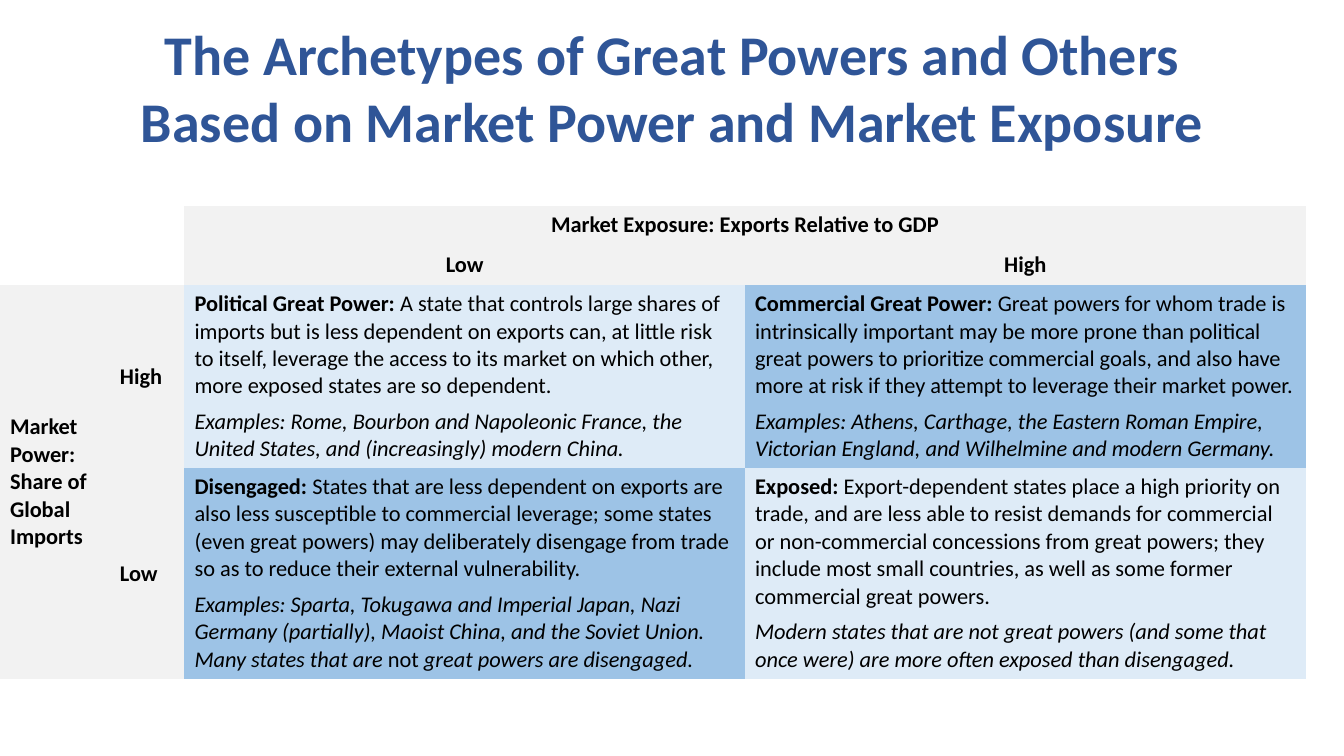
from dataclasses import dataclass

from pptx import Presentation
from pptx.dml.color import RGBColor
from pptx.enum.text import MSO_ANCHOR, MSO_AUTO_SIZE, PP_ALIGN
from pptx.util import Inches, Pt


@dataclass(frozen=True)
class Theme:
    face: str = "Calibri"
    title_size: int = 40
    table_size: int = 16
    title_ink: str = "2F5597"
    ink: str = "000000"
    header: str = "F2F2F2"
    pale: str = "DEEBF7"
    strong: str = "9DC3E6"


THEME = Theme()
BOLD = {"bold": True, "italic": False}
PLAIN = {"bold": False, "italic": False}
ITALIC = {"bold": False, "italic": True}
PLAIN_GRID_STYLE = "{2D5ABB26-0587-4C30-8999-92F81FD0307C}"


def add_text(paragraph, words, size, ink, style):
    run = paragraph.add_run()
    run.text = words
    run.font.color.rgb = RGBColor.from_string(ink)
    for key, value in {"name": THEME.face, "size": Pt(size), **style}.items():
        setattr(run.font, key, value)


def fill_cell(cell, colour, paragraphs, align, anchor, space_after=0):
    """Colour a cell and write its paragraphs, each a list of (words, style)."""
    cell.fill.solid()
    cell.fill.fore_color.rgb = RGBColor.from_string(colour)
    cell.vertical_anchor = anchor
    for index, pieces in enumerate(paragraphs):
        frame = cell.text_frame
        paragraph = frame.add_paragraph() if index else frame.paragraphs[0]
        paragraph.alignment = align
        paragraph.space_after = Pt(space_after)
        for words, style in pieces:
            add_text(paragraph, words, THEME.table_size, THEME.ink, style)


deck = Presentation()
deck.slide_width, deck.slide_height = Inches(13.33), Inches(7.5)
slide = deck.slides.add_slide(deck.slide_layouts[5])

# Title
heading = slide.shapes.title
heading_place = {
    "left": 0,
    "top": Inches(0.14),
    "width": deck.slide_width,
    "height": int(deck.slide_height * 0.12),
}
for key, value in heading_place.items():
    setattr(heading, key, value)
heading_format = {
    "word_wrap": True,
    "auto_size": MSO_AUTO_SIZE.NONE,
    "vertical_anchor": MSO_ANCHOR.TOP,
}
for key, value in heading_format.items():
    setattr(heading.text_frame, key, value)
heading_line = heading.text_frame.paragraphs[0]
heading_line.alignment = PP_ALIGN.CENTER
add_text(heading_line, "The Archetypes of Great Powers and Others",
         THEME.title_size, THEME.title_ink, BOLD)
heading_line.add_line_break()
add_text(heading_line, "Based on Market Power and Market Exposure",
         THEME.title_size, THEME.title_ink, BOLD)

# Matrix grid
column_widths = [1.09, 0.74, 5.56, 5.56]
row_heights = [0.38, 0.41, 1.81, 2.09]
matrix_frame = slide.shapes.add_table(
    len(row_heights), len(column_widths), 0, Inches(2.04),
    Inches(sum(column_widths)), Inches(sum(row_heights)))
matrix = matrix_frame.table
matrix.first_row = matrix.horz_banding = False
for style_id in matrix_frame.element.xpath(".//a:tableStyleId"):
    style_id.text = PLAIN_GRID_STYLE
for column, width in zip(matrix.columns, column_widths):
    column.width = Inches(width)
for row, height in zip(matrix.rows, row_heights):
    row.height = Inches(height)
matrix.cell(0, 2).merge(matrix.cell(0, 3))
matrix.cell(2, 0).merge(matrix.cell(3, 0))

# Axis headers
axis_headers = [
    (0, 2, "Market Exposure: Exports Relative to GDP", PP_ALIGN.CENTER, MSO_ANCHOR.TOP),
    (1, 2, "Low", PP_ALIGN.CENTER, MSO_ANCHOR.MIDDLE),
    (1, 3, "High", PP_ALIGN.CENTER, MSO_ANCHOR.MIDDLE),
    (2, 0, "Market Power: Share of Global Imports", PP_ALIGN.LEFT, MSO_ANCHOR.MIDDLE),
    (2, 1, "High", PP_ALIGN.LEFT, MSO_ANCHOR.MIDDLE),
    (3, 1, "Low", PP_ALIGN.LEFT, MSO_ANCHOR.MIDDLE),
]
for row, column, label, align, anchor in axis_headers:
    fill_cell(matrix.cell(row, column), THEME.header, [[(label, BOLD)]], align, anchor)

# Archetypes, row by row
archetypes = [
    ("Political Great Power: ",
     "A state that controls large shares of imports but is less dependent on exports can, "
     "at little risk to itself, leverage the access to its market on which other, more "
     "exposed states are so dependent.",
     [("Examples: Rome, Bourbon and Napoleonic France, the United States, and "
       "(increasingly) modern China.", ITALIC)]),
    ("Commercial Great Power: ",
     "Great powers for whom trade is intrinsically important may be more prone than "
     "political great powers to prioritize commercial goals, and also have more at risk "
     "if they attempt to leverage their market power.",
     [("Examples: Athens, Carthage, the Eastern Roman Empire, Victorian England, and "
       "Wilhelmine and modern Germany.", ITALIC)]),
    ("Disengaged: ",
     "States that are less dependent on exports are also less susceptible to commercial "
     "leverage; some states (even great powers) may deliberately disengage from trade so "
     "as to reduce their external vulnerability.",
     [("Examples: Sparta, Tokugawa and Imperial Japan, Nazi Germany (partially), Maoist "
       "China, and the Soviet Union. Many states that are ", ITALIC),
      ("not", PLAIN),
      (" great powers are disengaged.", ITALIC)]),
    ("Exposed: ",
     "Export-dependent states place a high priority on trade, and are less able to resist "
     "demands for commercial or non-commercial concessions from great powers; they include "
     "most small countries, as well as some former commercial great powers.",
     [("Modern states that are not great powers (and some that once were) are more often "
       "exposed than disengaged.", ITALIC)]),
]
for index, (archetype, definition, examples) in enumerate(archetypes):
    row, column = divmod(index, 2)
    colour = THEME.pale if row == column else THEME.strong
    fill_cell(matrix.cell(row + 2, column + 2), colour,
              [[(archetype, BOLD), (definition, PLAIN)], examples],
              PP_ALIGN.LEFT, MSO_ANCHOR.TOP, space_after=6)

# Blank cells must not stretch the short header rows
for cell in matrix.iter_cells():
    if not cell.text_frame.text:
        cell.margin_top = cell.margin_bottom = 0
        if not cell.is_spanned:
            cell.fill.background()

deck.save("out.pptx")
